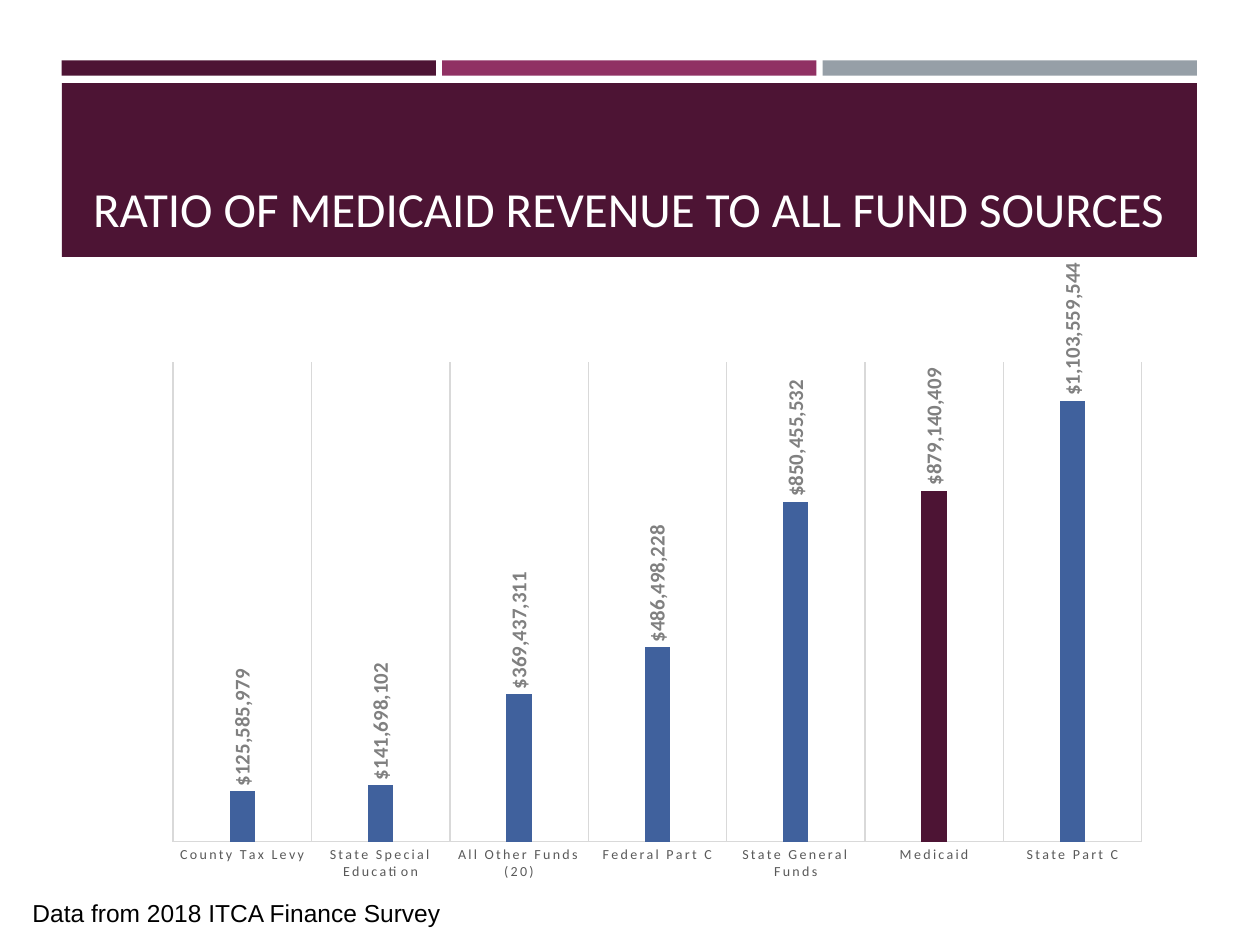
from dataclasses import dataclass

from lxml.etree import SubElement
from pptx import Presentation
from pptx.chart.data import CategoryChartData
from pptx.dml.color import RGBColor
from pptx.enum.chart import XL_CHART_TYPE, XL_LABEL_POSITION, XL_TICK_MARK
from pptx.enum.shapes import MSO_SHAPE
from pptx.enum.text import MSO_ANCHOR
from pptx.oxml.ns import qn
from pptx.util import Inches, Pt


@dataclass(frozen=True)
class Theme:
    plum: str = "4D1434"
    rose: str = "903163"
    slate: str = "969FA7"
    blue: str = "40619D"
    white: str = "FFFFFF"
    black: str = "000000"
    label: str = "808080"
    axis: str = "595959"
    rule: str = "D9D9D9"
    sans: str = "Calibri"
    plain: str = "Arial"
    title: int = 28
    note: int = 14
    value: int = 12
    base: int = 10
    tick: int = 8


THEME = Theme()
MONEY = '"$"#,##0'
FUNDS = {
    "County Tax Levy": 125585979,
    "State Special Education": 141698102,
    "All Other Funds (20)": 369437311,
    "Federal Part C": 486498228,
    "State General Funds": 850455532,
    "Medicaid": 879140409,
    "State Part C": 1103559544,
}


def rgb(color):
    return RGBColor.from_string(color)


def style(font, name, size, color, bold=False):
    font.name, font.size, font.bold = name, Pt(size), bold
    font.color.rgb = rgb(color)


def paint(fill, color):
    fill.solid()
    fill.fore_color.rgb = rgb(color)


def draw_line(line, color):
    line.color.rgb = rgb(color)
    line.width = Pt(0.75)


def add_bar(slide, box, color):
    bar = slide.shapes.add_shape(MSO_SHAPE.RECTANGLE, *map(Inches, box))
    bar.shadow.inherit = False
    paint(bar.fill, color)
    bar.line.fill.background()


def add_text(slide, box, text, name, size, color, anchor=MSO_ANCHOR.TOP):
    frame = slide.shapes.add_textbox(*map(Inches, box)).text_frame
    frame.word_wrap = True
    frame.vertical_anchor = anchor
    frame.text = text
    style(frame.paragraphs[0].font, name, size, color)


def place_plot(chart, x, y, w, h):
    area = chart.element.find(".//" + qn("c:plotArea"))
    for old in area.findall(qn("c:layout")):
        area.remove(old)
    layout = SubElement(area, qn("c:layout"))
    area.insert(0, layout)
    manual = SubElement(layout, qn("c:manualLayout"))
    parts = {"layoutTarget": "inner", "xMode": "edge", "yMode": "edge",
             "x": x, "y": y, "w": w, "h": h}
    for tag, val in parts.items():
        SubElement(manual, qn("c:" + tag)).set("val", str(val))


def style_axes(chart):
    funds = chart.category_axis
    funds.major_tick_mark = XL_TICK_MARK.NONE
    funds.has_major_gridlines = True
    draw_line(funds.major_gridlines.format.line, THEME.rule)
    draw_line(funds.format.line, THEME.rule)
    labels = funds.tick_labels
    style(labels.font, THEME.sans, THEME.tick, THEME.axis)
    text = chart.element.find(".//" + qn("c:catAx")).find(qn("c:txPr"))
    text.find(".//" + qn("a:defRPr")).set("spc", "120")

    money = chart.value_axis
    money.minimum_scale, money.maximum_scale = 0, 1.2e9
    money.has_major_gridlines = False
    money.visible = False
    money.tick_labels.number_format = MONEY
    money.tick_labels.number_format_is_linked = False


def style_bars(chart):
    plot = chart.plots[0]
    plot.gap_width, plot.overlap = 444, -90
    plot.vary_by_categories = False
    series = plot.series[0]
    paint(series.format.fill, THEME.blue)
    point = series.points[list(FUNDS).index("Medicaid")]
    paint(point.format.fill, THEME.plum)

    labels = series.data_labels
    labels.show_value = True
    labels.position = XL_LABEL_POSITION.OUTSIDE_END
    labels.number_format = MONEY
    labels.number_format_is_linked = False
    style(labels.font, THEME.sans, THEME.value, THEME.label, True)
    text = chart.element.find(".//" + qn("c:dLbls")).find(qn("c:txPr"))
    body = text.find(qn("a:bodyPr"))
    body.set("rot", "-5400000")
    body.set("vert", "horz")


def add_funds(slide, box):
    data = CategoryChartData(number_format=MONEY)
    data.categories = list(FUNDS)
    data.add_series("Series 1", list(FUNDS.values()))
    frame = slide.shapes.add_chart(
        XL_CHART_TYPE.COLUMN_CLUSTERED, *map(Inches, box), data)
    chart = frame.chart
    chart.has_title = False
    chart.has_legend = False
    style(chart.font, THEME.sans, THEME.base, THEME.black)
    place_plot(chart, 0.023, 0.151, 0.961, 0.763)
    style_axes(chart)
    style_bars(chart)


def main():
    deck = Presentation()
    deck.slide_width, deck.slide_height = Inches(10), Inches(7.5)
    slide = deck.slides.add_slide(deck.slide_layouts[6])
    for i, color in enumerate((THEME.plum, THEME.rose, THEME.slate)):
        add_bar(slide, (0.49 + 3.02 * i, 0.48, 2.97, 0.12), color)
    add_bar(slide, (0.49, 0.66, 9.01, 1.38), THEME.plum)
    add_text(slide, (0.64, 0.75, 8.74, 1.18),
             "RATIO OF MEDICAID REVENUE TO ALL FUND SOURCES",
             THEME.sans, THEME.title, THEME.white, MSO_ANCHOR.BOTTOM)
    add_text(slide, (0.16, 7.08, 3.97, 0.34),
             "Data from 2018 ITCA Finance Survey",
             THEME.plain, THEME.note, THEME.black)
    add_funds(slide, (1.19, 2.09, 8, 5.02))
    deck.save("out.pptx")


if __name__ == "__main__":
    main()
